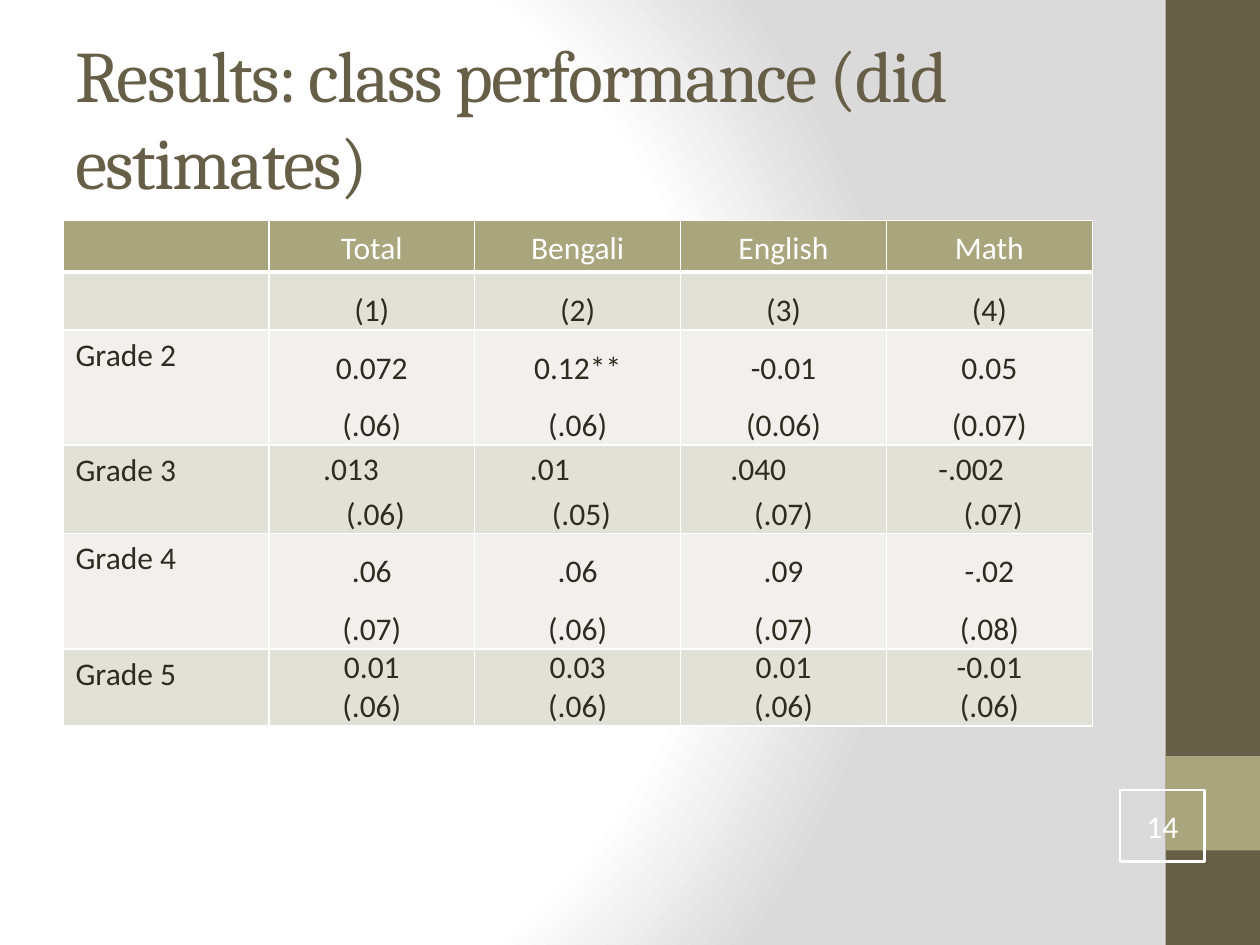
import pptx
import pptx.util
import pptx.oxml
import pptx.oxml.ns
import pptx.dml.color
import pptx.enum.shapes
import pptx.enum.text
import lxml.etree

Inches = pptx.util.Inches
Pt = pptx.util.Pt
ALIGN = pptx.enum.text.PP_ALIGN
ANCHOR = pptx.enum.text.MSO_ANCHOR
RECT = pptx.enum.shapes.MSO_SHAPE.RECTANGLE
qn = pptx.oxml.ns.qn

HUES = {"brown": "675E47", "olive": "A9A57C", "dark": "E2E1D7", "light": "F1F0EC",
        "ink": "2F2B20", "white": "FFFFFF", "gray": "DADADA"}

BODY = {"size": Pt(18), "name": "Calibri", "bold": False}
HEAD = {"size": Pt(41.4), "name": "Cambria", "bold": False}
TIGHT = {"margin_left": Inches(0.07), "margin_right": Inches(0.07),
         "margin_top": 0, "margin_bottom": 0}
FLUSH = {"margin_left": 0, "margin_right": 0, "margin_top": 0, "margin_bottom": 0}

MID, TOP = ANCHOR.MIDDLE, ANCHOR.TOP
ROWS = [
    ("olive", "white", 1.15, MID, "", ["Total", "Bengali", "English", "Math"]),
    ("dark", "ink", 1.5, MID, "", ["(1)", "(2)", "(3)", "(4)"]),
    ("light", "ink", 1.5, MID, "Grade 2",
     ["0.072\n(.06)", "0.12**\n(.06)", "-0.01\n(0.06)", "0.05\n(0.07)"]),
    ("dark", "ink", 1.15, MID, "Grade 3",
     [".013\n(.06)", ".01\n(.05)", ".040\n(.07)", "-.002\n(.07)"]),
    ("light", "ink", 1.5, MID, "Grade 4",
     [".06\n(.07)", ".06\n(.06)", ".09\n(.07)", "-.02\n(.08)"]),
    ("dark", "ink", 1, TOP, "Grade 5",
     ["0.01\n(.06)", "0.03\n(.06)", "0.01\n(.06)", "-0.01\n(.06)"]),
]
SHIFTS = {"Grade 3": [(0.33, 0.06), (0.44, 0.06), (0.4, 0), (0.29, 0.06)]}


def tint(hue):
    return pptx.dml.color.RGBColor.from_string(HUES[hue])


def apply(item, values):
    for key, value in values.items():
        setattr(item, key, value)


def write(frame, text, font, hue, align, space=None):
    frame.text = text
    for para in frame.paragraphs:
        apply(para, {"alignment": align, "line_spacing": space})
        for run in para.runs:
            apply(run.font, font)
            run.font.color.rgb = tint(hue)


def block(slide, box, fill=None, line=None):
    shape = slide.shapes.add_shape(RECT, *map(Inches, box))
    shape.shadow.inherit = False
    if fill:
        shape.fill.solid()
        shape.fill.fore_color.rgb = tint(fill)
    else:
        shape.fill.background()
    if line:
        shape.line.color.rgb = tint(line)
        shape.line.width = Pt(1.5)
    else:
        shape.line.fill.background()
    return shape


def backdrop(slide):
    slide.background.fill.solid()
    props = slide.background.fill._xPr
    stops = "".join(f'<a:gs pos="{pos * 1000}"><a:srgbClr val="{HUES[hue]}"/></a:gs>'
                    for pos, hue in ((0, "white"), (75, "white"), (100, "gray")))
    grad = pptx.oxml.parse_xml(
        f'<a:gradFill {pptx.oxml.ns.nsdecls("a")} rotWithShape="1">'
        f'<a:gsLst>{stops}</a:gsLst><a:path path="circle">'
        '<a:fillToRect l="20000" t="50000" r="100000" b="50000"/></a:path></a:gradFill>')
    props.replace(props.find(qn("a:solidFill")), grad)


def sidebar(slide, box):
    left, top, width, height = box
    block(slide, box, "brown")
    block(slide, (left, top + 0.8 * height, width, width), "olive")


def heading(slide, box, text):
    title = slide.shapes.title
    apply(title, dict(zip(("left", "top", "width", "height"), map(Inches, box))))
    frame = title.text_frame
    apply(frame, {"word_wrap": True, "vertical_anchor": MID,
                  "auto_size": pptx.enum.text.MSO_AUTO_SIZE.NONE})
    write(frame, text, HEAD, "brown", ALIGN.LEFT)
    for run in frame.paragraphs[0].runs:
        run.font._element.set("spc", "-100")


def border(cell, base):
    props = cell._tc.get_or_add_tcPr()
    for spot, (side, width) in enumerate(zip("LRTB", (1, 1, 1, base))):
        edge = lxml.etree.Element(qn(f"a:ln{side}"), w=str(Pt(width)))
        fill = lxml.etree.SubElement(edge, qn("a:solidFill"))
        lxml.etree.SubElement(fill, qn("a:srgbClr"), val=HUES["white"])
        props.insert(spot, edge)


def nudge(cell, left, right):
    cell.margin_right = Inches(0.07 + left)
    props = cell.text_frame.paragraphs[1]._p.get_or_add_pPr()
    props.set("marL", str(Inches(left + right)))


def results(slide, box):
    left, top, width, height = box
    count = len(ROWS[0][5]) + 1
    table = slide.shapes.add_table(len(ROWS), count, *map(Inches, box)).table
    for col in table.columns:
        col.width = Inches(width / count)
    for r, (fill, hue, space, anchor, label, values) in enumerate(ROWS):
        table.rows[r].height = Inches(height / len(ROWS))
        for c, text in enumerate([label] + values):
            cell = table.cell(r, c)
            cell.fill.solid()
            cell.fill.fore_color.rgb = tint(fill)
            border(cell, 1 if r else 3)
            if c:
                apply(cell, {**TIGHT, "vertical_anchor": anchor})
                write(cell.text_frame, text, BODY, hue, ALIGN.CENTER, space)
            elif text:
                write(cell.text_frame, text, BODY, hue, ALIGN.LEFT)
        for c, shift in enumerate(SHIFTS.get(label, []), 1):
            nudge(table.cell(r, c), *shift)


def number(slide, box, text):
    frame = block(slide, box, line="white").text_frame
    apply(frame, {**FLUSH, "vertical_anchor": MID, "word_wrap": True})
    write(frame, text, BODY, "white", ALIGN.CENTER)


def main():
    deck = pptx.Presentation()
    apply(deck, {"slide_width": Inches(10), "slide_height": Inches(7.5)})
    slide = deck.slides.add_slide(deck.slide_layouts[5])
    backdrop(slide)
    sidebar(slide, (9.25, 0, 0.75, 7.5))
    heading(slide, (0.5, 0.3, 8.33, 1.25), "Results: class performance (did estimates)")
    results(slide, (0.5, 1.75, 8.17, 2.46))
    number(slide, (8.89, 6.27, 0.67, 0.57), "14")
    deck.save("out.pptx")


if __name__ == "__main__":
    main()
